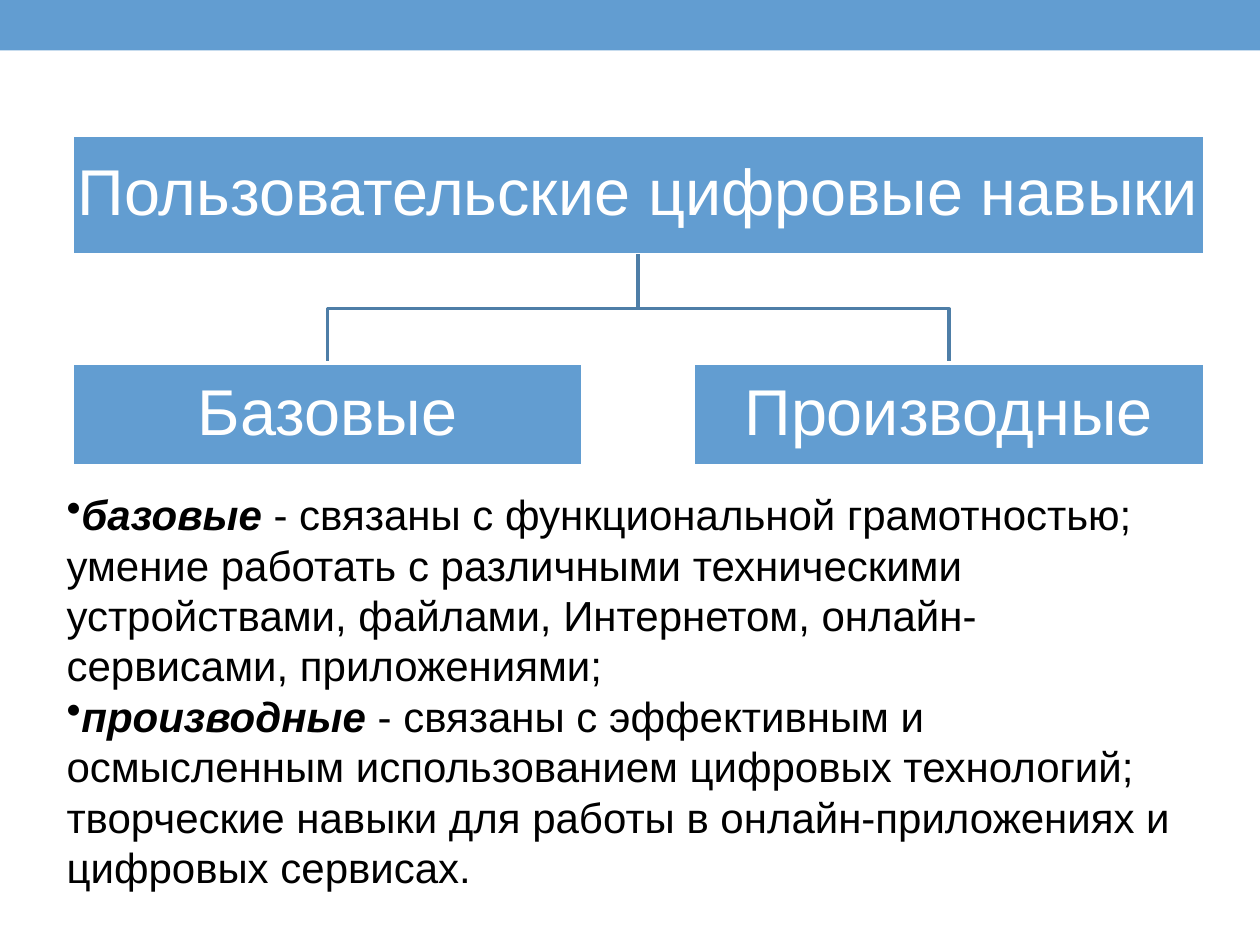
from dataclasses import dataclass

import pptx
import pptx.dml.color
import pptx.enum.shapes
import pptx.enum.text
import pptx.util
from lxml import etree
from pptx.util import Inches

RECTANGLE = pptx.enum.shapes.MSO_SHAPE.RECTANGLE
ANCHOR = pptx.enum.text.MSO_ANCHOR
AUTO_SIZE = pptx.enum.text.MSO_AUTO_SIZE
CENTER = pptx.enum.text.PP_ALIGN.CENTER


def rgb(value):
    return pptx.dml.color.RGBColor.from_string(value)


@dataclass(frozen=True)
class Theme:
    font: str = "Arial"
    fill = rgb("629DD1")
    branch = rgb("4E7EA7")
    light = rgb("FFFFFF")
    text = rgb("000000")
    box_size = pptx.util.Pt(37)
    body_size = pptx.util.Pt(24)
    line_width = pptx.util.Pt(2.08)


THEME = Theme()

ROOT = "Пользовательские цифровые навыки"
CHILDREN = ["Базовые", "Производные"]
DEFINITIONS = [
    ("базовые", " - связаны с функциональной грамотностью; умение работать с "
     "различными техническими устройствами, файлами, Интернетом, "
     "онлайн-сервисами, приложениями;"),
    ("производные", " - связаны с эффективным и осмысленным использованием "
     "цифровых технологий; творческие навыки для работы в "
     "онлайн-приложениях и цифровых сервисах."),
]


def set_font(font, size, color):
    font.name, font.size = THEME.font, size
    font.color.rgb = color


def add_band(slide, left, top, width, height):
    sp = slide.shapes.add_shape(RECTANGLE, left, top, width, height)
    sp.shadow.inherit = False
    sp.fill.solid()
    sp.fill.fore_color.rgb = THEME.fill
    sp.line.fill.background()


def format_box(sp, text):
    sp.fill.solid()
    sp.fill.fore_color.rgb = THEME.fill
    sp.line.color.rgb = THEME.light
    sp.line.width = THEME.line_width
    tf = sp.text_frame
    tf.text = text
    tf.word_wrap = True
    tf.auto_size = AUTO_SIZE.NONE
    tf.vertical_anchor = ANCHOR.MIDDLE
    tf.margin_left = tf.margin_right = Inches(0.03)
    tf.margin_top = tf.margin_bottom = Inches(0.03)
    p = tf.paragraphs[0]
    p.alignment = CENTER
    p.line_spacing = 0.9
    p.space_before = pptx.util.Pt(0)
    set_font(p.font, THEME.box_size, THEME.light)


def add_branch(slide, start, end):
    """Draw an elbow that turns halfway down from start to end."""
    (x1, y1), (x2, y2) = start, end
    middle = (y1 + y2) // 2
    builder = slide.shapes.build_freeform(x1, y1)
    builder.add_line_segments([(x1, middle), (x2, middle), (x2, y2)], close=False)
    sp = builder.convert_to_shape()
    sp.shadow.inherit = False
    sp.fill.background()
    sp.line.color.rgb = THEME.branch
    sp.line.width = THEME.line_width


def add_tree(slide, left, top, width, height):
    """Place the title as the root, with its children spread over the width."""
    root_height, child_height = Inches(0.95), Inches(0.82)
    child_width = Inches(4.06)
    child_top = top + height - child_height
    step = (width - child_width) // (len(CHILDREN) - 1)

    title = slide.shapes.title
    title.left, title.top, title.width, title.height = left, top, width, root_height
    format_box(title, ROOT)

    lefts = [left + i * step for i in range(len(CHILDREN))]
    for x in lefts:
        add_branch(slide, (left + width // 2, top + root_height),
                   (x + child_width // 2, child_top))
    for x, text in zip(lefts, CHILDREN):
        sp = slide.shapes.add_shape(RECTANGLE, x, child_top, child_width, child_height)
        sp.shadow.inherit = False
        format_box(sp, text)


def add_definitions(slide, left, top, width, height):
    tf = slide.shapes.add_textbox(left, top, width, height).text_frame
    tf.word_wrap = True
    tf.auto_size = AUTO_SIZE.SHAPE_TO_FIT_TEXT
    for i, (term, meaning) in enumerate(DEFINITIONS):
        p = tf.paragraphs[0] if i == 0 else tf.add_paragraph()
        set_font(p.font, THEME.body_size, THEME.text)
        r = p.add_run()
        r.text = term
        r.font.bold = r.font.italic = True
        p.add_run().text = meaning
        properties = p._p.get_or_add_pPr()
        properties.set("marL", "0")
        properties.set("indent", "0")
        bullet = etree.Element(pptx.oxml.ns.qn("a:buChar"), char="•")
        properties.insert(0, bullet)
        for r in p.runs:
            set_font(r.font, THEME.body_size, THEME.text)


def main():
    prs = pptx.Presentation()
    prs.slide_width, prs.slide_height = Inches(10), Inches(7.5)
    slide = prs.slides.add_slide(prs.slide_layouts[5])
    add_band(slide, 0, 0, prs.slide_width, Inches(0.4))
    add_tree(slide, Inches(0.57), Inches(1.07), Inches(8.99), Inches(2.63))
    add_definitions(slide, Inches(0.43), Inches(3.83), Inches(9.13), Inches(3.33))
    prs.save("out.pptx")


if __name__ == "__main__":
    main()
